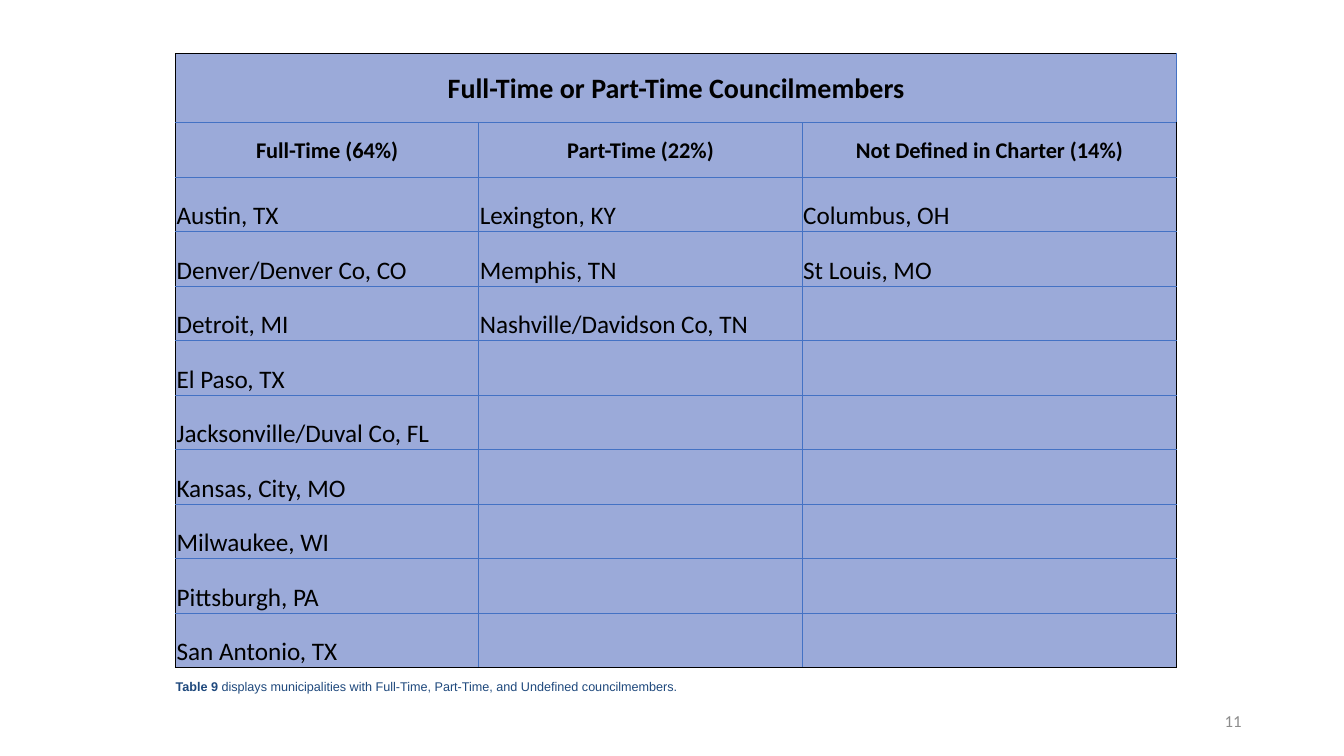
from dataclasses import dataclass
from itertools import zip_longest

from lxml.etree import SubElement as Sub
from pptx import Presentation
from pptx.dml.color import RGBColor as Rgb
from pptx.enum.shapes import MSO_SHAPE as Shape
from pptx.enum.text import MSO_ANCHOR as Anchor, PP_ALIGN as Align
from pptx.oxml.ns import qn
from pptx.util import Inches, Pt


@dataclass(frozen=True)
class Theme:
    body: str = "Calibri"
    note: str = "Arial"
    ink: str = "000000"
    grid: str = "4472C4"
    cell: str = "9BAAD9"
    navy: str = "1F497D"
    gray: str = "8C8C8C"
    back: str = "FFFFFF"
    title: int = 20
    head: int = 16
    text: int = 18
    small: int = 9
    page: int = 12


THEME = Theme()
UNIT = 7.5 / 9  # the slide is a grid of 16 columns by 9 rows

TITLE = "Full-Time or Part-Time Councilmembers"
GROUPS = {
    "Full-Time (64%)": [
        "Austin, TX", "Denver/Denver Co, CO", "Detroit, MI", "El Paso, TX",
        "Jacksonville/Duval Co, FL", "Kansas, City, MO", "Milwaukee, WI",
        "Pittsburgh, PA", "San Antonio, TX",
    ],
    "Part-Time (22%)": [
        "Lexington, KY", "Memphis, TN", "Nashville/Davidson Co, TN",
    ],
    "Not Defined in Charter (14%)": ["Columbus, OH", "St Louis, MO"],
}
WIDTHS = (3.61, 3.85, 4.46)
TOP, HIGH, FIRST = 0.64, 7.31, 0.82
LEFT = 2.09


def span(*cells):
    """Turn grid columns or rows into lengths."""
    return [Inches(n * UNIT) for n in cells]


def write(frame, *parts, size, font=THEME.body, color=THEME.ink,
          bold=(), align=Align.LEFT, anchor=Anchor.TOP):
    """Write runs in one paragraph; bold holds the indexes of bold runs."""
    frame.word_wrap = True
    frame.vertical_anchor = anchor
    line = frame.paragraphs[0]
    line.alignment = align
    for i, part in enumerate(parts):
        run = line.add_run()
        run.text = part
        run.font.name = font
        run.font.size = Pt(size)
        run.font.bold = i in bold
        run.font.color.rgb = Rgb.from_string(color)


def edge(cell, side, outer):
    """Draw one border: black outside the table, blue inside."""
    width, color = (1, THEME.ink) if outer else (0.5, THEME.grid)
    props = cell._tc.get_or_add_tcPr()
    line = Sub(props, qn(f"a:ln{side}"), w=str(Pt(width)))
    fill = Sub(line, qn("a:solidFill"))
    Sub(fill, qn("a:srgbClr"), val=color)


def style(cell, row, col, last):
    """Set borders, fill and margins of a cell."""
    outer = {"L": col == 0, "R": col == len(WIDTHS) - 1,
             "T": row == 0, "B": row == last}
    for side, flag in outer.items():
        edge(cell, side, flag)
    cell.fill.solid()
    cell.fill.fore_color.rgb = Rgb.from_string(THEME.cell)
    cell.margin_left = cell.margin_right = cell.margin_top = Inches(0.01)
    cell.margin_bottom = 0


def fill_cell(cell, text, row):
    """Write a cell in the format of its row."""
    head = row < 2
    size = (THEME.title, THEME.head)[row] if head else THEME.text
    cell.vertical_anchor = Anchor.MIDDLE if head else Anchor.BOTTOM
    write(cell.text_frame, text, size=size, bold=(0,) if head else (),
          align=Align.CENTER if head else Align.LEFT,
          anchor=cell.vertical_anchor)


def add_grid(slide):
    """Add the table of cities."""
    rows = [(TITLE, "", ""), tuple(GROUPS)]
    rows += zip_longest(*GROUPS.values(), fillvalue="")
    last = len(rows) - 1
    box = span(LEFT, TOP, sum(WIDTHS), HIGH)
    table = slide.shapes.add_table(len(rows), len(WIDTHS), *box).table
    table.first_row = table.horz_banding = False
    for col, width in zip(table.columns, span(*WIDTHS)):
        col.width = width
    rest = (HIGH - FIRST) / last
    for row, height in zip(table.rows, span(FIRST, *[rest] * last)):
        row.height = height
    for r, texts in enumerate(rows):
        for c, text in enumerate(texts):
            cell = table.cell(r, c)
            style(cell, r, c, last)
            if text:
                fill_cell(cell, text, r)
    table.cell(0, 0).merge(table.cell(0, len(WIDTHS) - 1))


def add_note(slide):
    """Add the caption under the table."""
    box = slide.shapes.add_shape(Shape.RECTANGLE, *span(LEFT, 8.08, 7.33, 0.26))
    box.shadow.inherit = False
    box.fill.solid()
    box.fill.fore_color.rgb = Rgb.from_string(THEME.back)
    box.line.fill.background()
    frame = box.text_frame
    frame.margin_left = frame.margin_right = 0
    frame.margin_top = frame.margin_bottom = 0
    write(frame, "Table 9 ",
          "displays municipalities with Full-Time, Part-Time, "
          "and Undefined councilmembers.",
          size=THEME.small, font=THEME.note, color=THEME.navy, bold=(0,))


def add_page(slide):
    """Add the page number."""
    box = slide.shapes.add_textbox(*span(11.3, 8.34, 3.6, 0.48))
    write(box.text_frame, "11", size=THEME.page, color=THEME.gray,
          align=Align.RIGHT, anchor=Anchor.MIDDLE)


def main():
    deck = Presentation()
    deck.slide_width, deck.slide_height = span(16, 9)
    slide = deck.slides.add_slide(deck.slide_layouts[6])
    add_page(slide)
    add_grid(slide)
    add_note(slide)
    deck.save("out.pptx")


if __name__ == "__main__":
    main()
